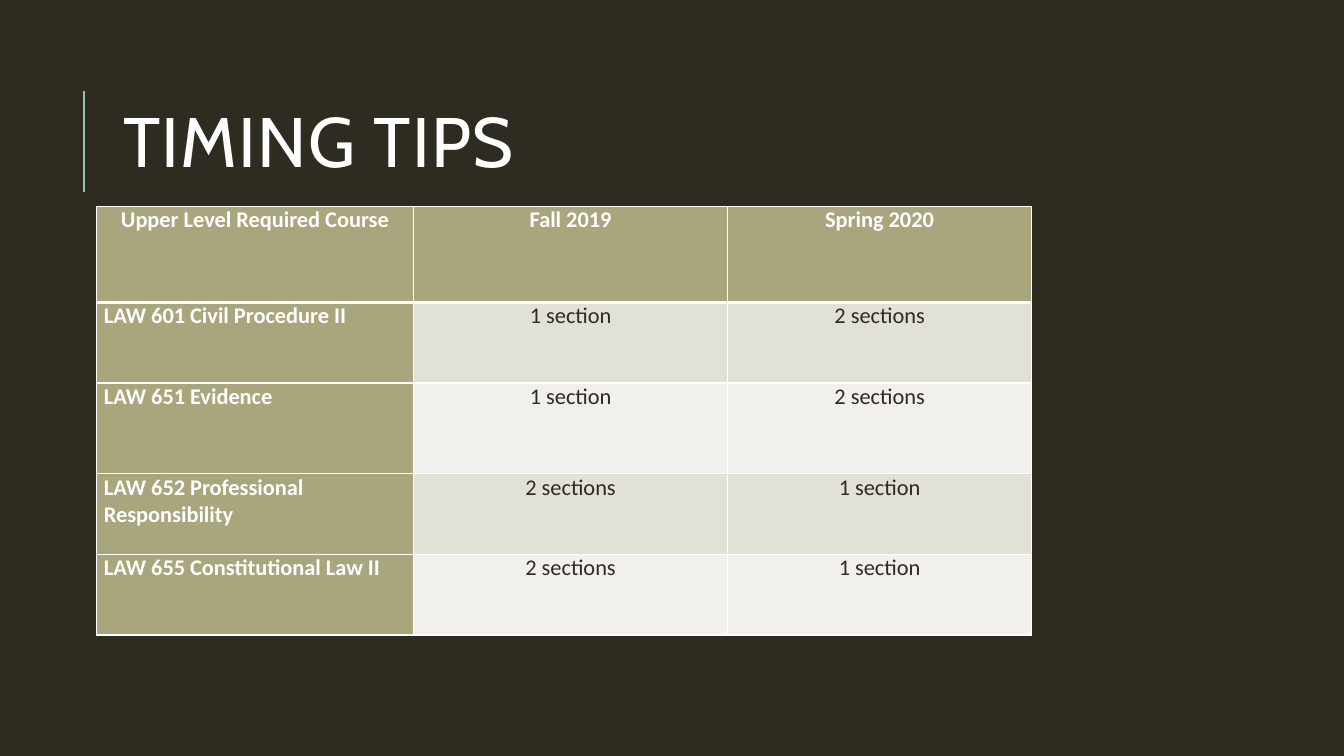
from lxml import etree
from pptx import Presentation
from pptx.dml.color import RGBColor
from pptx.enum.shapes import MSO_CONNECTOR
from pptx.enum.text import MSO_ANCHOR, MSO_AUTO_SIZE, PP_ALIGN
from pptx.oxml.ns import qn
from pptx.util import Inches, Pt

COLORS = {
    "dark": "2E2B21",
    "white": "FFFFFF",
    "accent": "9CBEBD",
    "olive": "A9A57C",
    "band_dark": "E2E1D7",
    "band_light": "F1F0EC",
}
COURSES = [
    ["Upper Level Required Course", "Fall 2019", "Spring 2020"],
    ["LAW 601 Civil Procedure II", "1 section", "2 sections"],
    ["LAW 651 Evidence", "1 section", "2 sections"],
    ["LAW 652 Professional Responsibility", "2 sections", "1 section"],
    ["LAW 655 Constitutional Law II", "2 sections", "1 section"],
]
COL_WIDTHS = [3.14, 3.12, 3.01]
ROW_HEIGHTS = [0.95, 0.8, 0.9, 0.8, 0.8]


def rgb(name):
    return RGBColor.from_string(COLORS[name])


def format_run(r, font, size, color, bold=False):
    r.font.name = font
    r.font.size = Pt(size)
    r.font.color.rgb = rgb(color)
    r.font.bold = bold


def add_title(s, text):
    sp = s.shapes.title
    sp.left, sp.top = Inches(1.12), Inches(0.64)
    sp.width, sp.height = Inches(10.63), Inches(1.64)
    tf = sp.text_frame
    tf.text = text
    tf.word_wrap = True
    tf.auto_size = MSO_AUTO_SIZE.NONE
    tf.vertical_anchor = MSO_ANCHOR.MIDDLE
    p = tf.paragraphs[0]
    p.alignment = PP_ALIGN.LEFT
    p.line_spacing = 0.8
    r = p.runs[0]
    format_run(r, "Cabin", 50, "white")
    r.font._element.set("spc", "100")


def add_rule(s, x, top, bottom):
    line = s.shapes.add_connector(
        MSO_CONNECTOR.STRAIGHT, Inches(x), Inches(bottom), Inches(x), Inches(top))
    line.line.color.rgb = rgb("accent")
    line.line.width = Pt(1.5)
    etree.SubElement(line._element.spPr, qn("a:effectLst"))


def set_border(cell, side, width):
    ln = etree.SubElement(cell._tc.get_or_add_tcPr(), qn(f"a:ln{side}"), w=str(Pt(width)))
    fill = etree.SubElement(ln, qn("a:solidFill"))
    etree.SubElement(fill, qn("a:srgbClr"), val=COLORS["white"])


def format_cell(cell, text, row, col):
    is_heading = row == 0 or col == 0
    cell.margin_left = cell.margin_right = Inches(0.07)
    cell.margin_top = cell.margin_bottom = 0
    cell.vertical_anchor = MSO_ANCHOR.TOP

    # Borders come before the fill; the line under the header row is heavier
    heavy_side = {0: "B", 1: "T"}.get(row)
    for side in "LRTB":
        set_border(cell, side, 3 if side == heavy_side else 1)
    band = "band_dark" if row % 2 else "band_light"
    cell.fill.solid()
    cell.fill.fore_color.rgb = rgb("olive" if is_heading else band)

    cell.text_frame.text = text
    p = cell.text_frame.paragraphs[0]
    p.alignment = PP_ALIGN.LEFT if row and col == 0 else PP_ALIGN.CENTER
    format_run(p.runs[0], "Calibri", 16, "white" if is_heading else "dark", is_heading)


def add_course_table(s):
    table = s.shapes.add_table(
        len(COURSES), len(COL_WIDTHS), Inches(0.96), Inches(2.05),
        Inches(sum(COL_WIDTHS)), Inches(sum(ROW_HEIGHTS))).table
    table.first_col = True
    for column, width in zip(table.columns, COL_WIDTHS):
        column.width = Inches(width)
    for row, height in zip(table.rows, ROW_HEIGHTS):
        row.height = Inches(height)
    for i, texts in enumerate(COURSES):
        for j, text in enumerate(texts):
            format_cell(table.cell(i, j), text, i, j)


def main():
    prs = Presentation()
    prs.slide_width, prs.slide_height = Inches(13.33), Inches(7.5)
    s = prs.slides.add_slide(prs.slide_layouts[5])
    s.background.fill.solid()
    s.background.fill.fore_color.rgb = rgb("dark")

    # Heading with its vertical rule
    add_rule(s, 0.83, 0.9, 1.9)
    add_title(s, "TIMING TIPS")

    # Sections offered per term
    add_course_table(s)
    prs.save("out.pptx")


if __name__ == "__main__":
    main()
